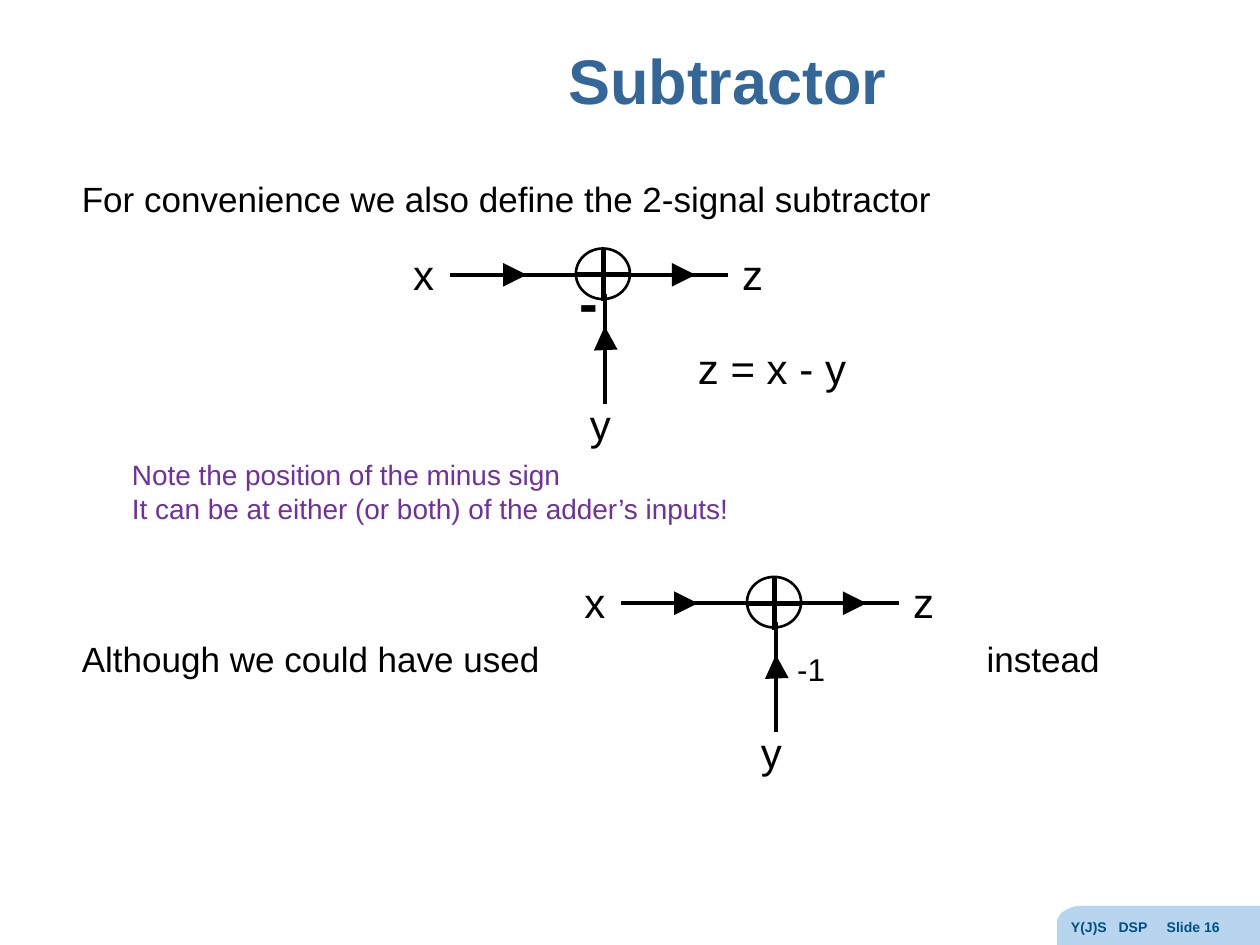
from lxml import etree
from pptx import Presentation
from pptx.dml.color import RGBColor
from pptx.enum.shapes import MSO_CONNECTOR, MSO_SHAPE
from pptx.enum.text import MSO_ANCHOR, MSO_AUTO_SIZE, PP_ALIGN
from pptx.oxml.ns import qn
from pptx.util import Cm, Pt

STRAIGHT = MSO_CONNECTOR.STRAIGHT
OVAL = MSO_SHAPE.OVAL
CENTER = PP_ALIGN.CENTER
MIDDLE = MSO_ANCHOR.MIDDLE
NO_AUTOFIT = MSO_AUTO_SIZE.NONE
COLORS = {
    "text": "000000",
    "title": "336699",
    "note": "7030A0",
    "footer": "005081",
    "footer_fill": "B7D5EF",
}
FONT = "Arial"


def color(name):
    """Return the named colour."""
    return RGBColor.from_string(COLORS[name])


def format_runs(paragraph, size, color_name, bold=False):
    """Apply the font settings to every run of a paragraph."""
    for run in paragraph.runs:
        run.font.name = FONT
        run.font.size = Pt(size)
        run.font.bold = bold
        run.font.color.rgb = color(color_name)


def set_tabs(paragraph, positions):
    """Give a paragraph left tab stops at the positions in centimetres."""
    tab_list = etree.SubElement(paragraph._p.get_or_add_pPr(), qn("a:tabLst"))
    for position in positions:
        etree.SubElement(tab_list, qn("a:tab"), pos=str(Cm(position)), algn="l")


def add_text(shapes, box, lines, size, color_name="text", bold=False):
    """Add a text box with one paragraph per line and return its paragraphs."""
    frame = shapes.add_textbox(*map(Cm, box)).text_frame
    frame.word_wrap = True
    frame.text = "\n".join(lines)
    for paragraph in frame.paragraphs:
        format_runs(paragraph, size, color_name, bold)
    return frame.paragraphs


def add_line(shapes, start, end, width, arrow=False):
    """Add a black line between two points, with an optional arrowhead."""
    connector = shapes.add_connector(STRAIGHT, *map(Cm, (*start, *end)))
    connector.line.color.rgb = color("text")
    connector.line.width = Pt(width)
    if arrow:
        etree.SubElement(connector.line._get_or_add_ln(), qn("a:tailEnd"), type="triangle")
    etree.SubElement(connector._element.spPr, qn("a:effectLst"))


def add_title(slide, box, text):
    """Place and format the title placeholder."""
    title = slide.shapes.title
    title.left, title.top, title.width, title.height = map(Cm, box)
    frame = title.text_frame
    frame.text = text
    frame.auto_size = NO_AUTOFIT
    frame.vertical_anchor = MIDDLE
    paragraph = frame.paragraphs[0]
    paragraph.alignment = CENTER
    paragraph.line_spacing = 0.9
    format_runs(paragraph, 36, "title", True)


def add_body(slide, box):
    """Add the two body sentences, the second with a gap for its diagram."""
    lines = ["For convenience we also define the 2-signal subtractor",
             "Although we could have used\tinstead"]
    closing = add_text(slide.shapes, box, lines, 20)[1]
    closing.space_before = Pt(239)
    set_tabs(closing, [18.24])


def add_adder_diagram(slide, left, top, sign, sign_box, sign_size, sign_bold=False):
    """Draw an adder with inputs x and y, output z and a sign on the y input."""
    shapes = slide.shapes.add_group_shape().shapes
    center_x, center_y = left + 4.09, top + 0.66

    def at(x, y):
        """Shift a point given from the centre of the adder."""
        return center_x + x, center_y + y

    circle = shapes.add_shape(OVAL, *map(Cm, (*at(-0.56, -0.53), 1.09, 1.02)))
    circle.shadow.inherit = False
    circle.fill.background()
    circle.line.color.rgb = color("text")
    circle.line.width = Pt(1.5)

    for start, end, width, arrow in [
        ((-3.1, 0), (2.51, 0), 2.25, False),
        ((0.02, 2.6), (0.02, 0.38), 2.25, False),
        ((0, -0.53), (0, 0.53), 3, False),
        ((0.5, 0), (-0.56, 0), 3, False),
        ((-1.8, 0), (-1.55, 0), 4.5, True),
        ((1.6, 0), (1.85, 0), 4.5, True),
        ((0.04, 1.5), (0.02, 1.04), 4.5, True),
    ]:
        add_line(shapes, at(*start), at(*end), width, arrow)

    for label, x, y in [("x", -4.09, -0.66), ("z", 2.54, -0.66), ("y", -0.53, 2.36)]:
        add_text(shapes, (*at(x, y), 1.17, 1.27), [label], 24)
    x, y, width, height = sign_box
    add_text(shapes, (*at(x, y), width, height), [sign], sign_size, bold=sign_bold)


def add_footer(slide, left, top, width, height):
    """Draw the rounded corner tab with the course name and slide number."""
    outline = [(width, 0), (width, height), (0, height), (0, 0.38), (0, 0.28),
               (0.08, 0.15), (0.18, 0.08), (0.3, 0.03), (0.41, 0)]
    points = [(Cm(left + x), Cm(top + y)) for x, y in outline]
    builder = slide.shapes.build_freeform(*points[0])
    builder.add_line_segments(points[1:], close=True)
    tab = builder.convert_to_shape()
    tab.shadow.inherit = False
    tab.fill.solid()
    tab.fill.fore_color.rgb = color("footer_fill")
    tab.line.fill.background()
    box = (left + 0.03, top + 0.13, width - 0.03, height - 0.13)
    text = add_text(slide.shapes, box, ["Y(J)S\tDSP\tSlide 16"], 8, "footer", True)
    set_tabs(text[0], [0.96, 1.93])


def main():
    """Build the subtractor slide and save it."""
    presentation = Presentation()
    presentation.slide_width, presentation.slide_height = Cm(25.4), Cm(19.05)
    slide = presentation.slides.add_slide(presentation.slide_layouts[5])
    add_footer(slide, 21.31, 18.26, 4.09, 0.79)
    add_title(slide, (5.38, 0.46, 18.57, 2.46), "Subtractor")
    add_body(slide, (1.4, 3.45, 23.29, 15.1))
    add_adder_diagram(slide, 8.08, 4.88, "-", (-0.74, -0.28, 1.09, 1.6), 32, True)
    add_text(slide.shapes, (13.82, 6.78, 4.19, 1.27), ["z = x - y"], 24)
    add_adder_diagram(slide, 11.53, 11.5, "-1", (0.2, 0.81, 1.09, 1.02), 18)
    note = ["Note the position of the minus sign",
            "It can be at either (or both) of the adder’s inputs!"]
    add_text(slide.shapes, (2.41, 9.1, 13.84, 1.63), note, 16, "note")
    presentation.save("out.pptx")


if __name__ == "__main__":
    main()
